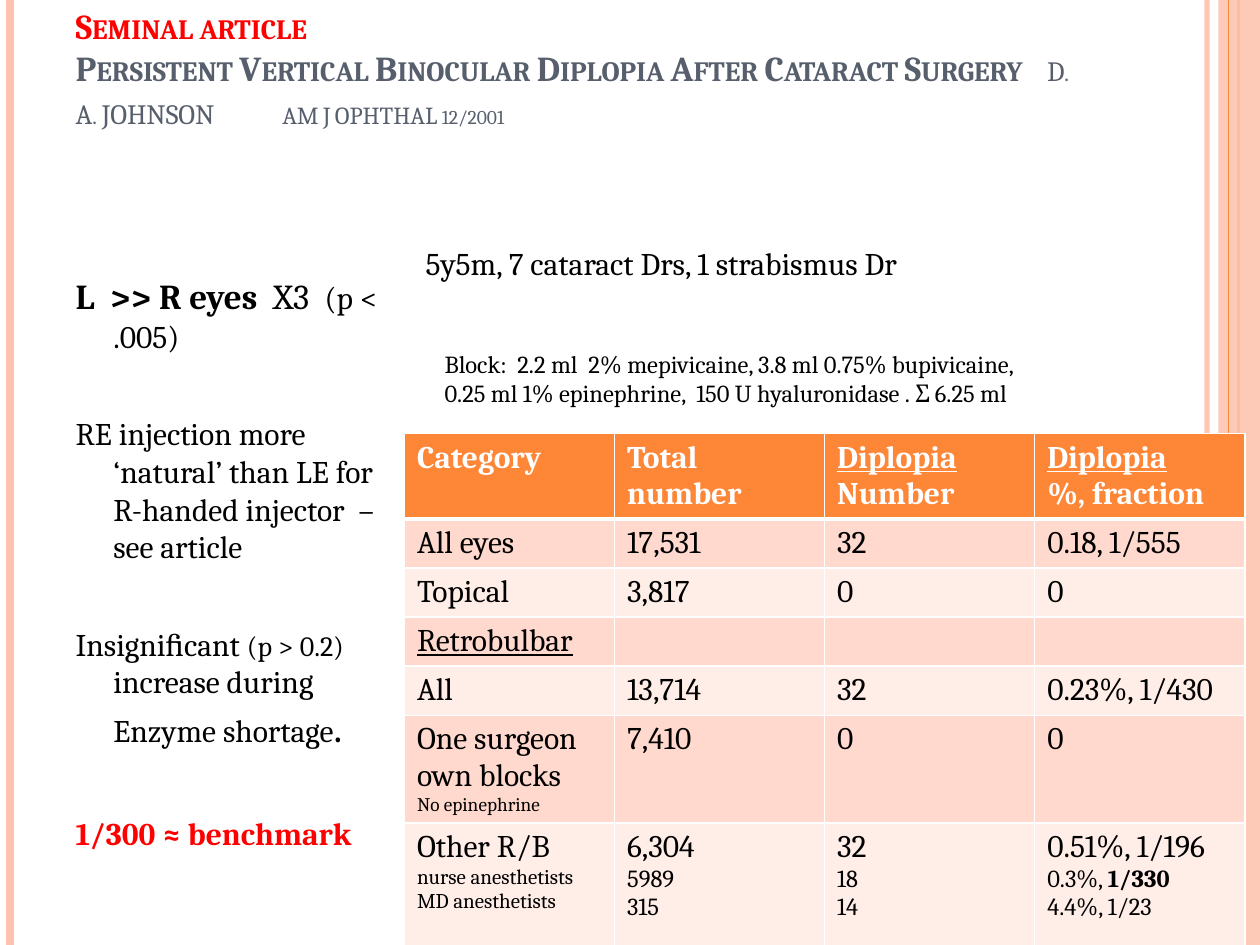
from lxml.etree import SubElement
from pptx import Presentation
from pptx.dml.color import RGBColor
from pptx.enum.shapes import MSO_CONNECTOR, MSO_SHAPE
from pptx.enum.text import MSO_ANCHOR, MSO_AUTO_SIZE, PP_ALIGN
from pptx.oxml.ns import qn
from pptx.util import Emu, Inches, Pt

FONT = "Cambria"
BLACK = RGBColor(0, 0, 0)
WHITE = RGBColor(255, 255, 255)
RED = RGBColor(255, 0, 0)
SLATE = RGBColor(0x57, 0x5F, 0x6D)
ORANGE = RGBColor(0xFE, 0x86, 0x37)
PEACH = RGBColor(0xFE, 0xC3, 0xAE)
BANDS = [RGBColor(0xFF, 0xED, 0xE8), RGBColor(0xFF, 0xD9, 0xCE)]

# A run is (text, size, flags, colour); flags: b bold, u underlined, s small caps.
TITLE = [
    [("Seminal article", 20, "bs", RED)],
    [("Persistent Vertical Binocular Diplopia After Cataract Surgery", 20, "bs", SLATE),
     ("\t", 20, "bs", SLATE),
     ("D. A. JOHNSON", 16, "s", SLATE),
     ("\t", 20, "bs", SLATE),
     ("AM J OPHTHAL 12/2001", 14, "s", SLATE)],
]
TABS = [1.64, 7.71]

# Space before in points, then the runs
FINDINGS = [
    (6, [("L  >> R eyes  ", 20, "b", BLACK), ("X3  ", 20, "", BLACK),
         ("(p < .005)", 18, "", BLACK)]),
    (34, [("RE injection more ‘natural’ than LE for R-handed injector  – see article",
           18, "", BLACK)]),
    (34, [("Insigniﬁcant ", 18, "", BLACK), ("(p > 0.2) ", 16, "", BLACK),
          ("increase during Enzyme shortage", 18, "", BLACK), (".", 24, "", BLACK)]),
    (36, [("1/300 ≈ benchmark", 18, "b", RED)]),
]

# left, top, width, height, wrap, size, lines
NOTES = [
    (3.28, 1.89, 4.67, 0.71, False, 18, ["5y5m, 7 cataract Drs, 1 strabismus Dr"]),
    (3.43, 2.72, 6.12, 0.88, True, 14,
     ["Block:  2.2 ml  2% mepivicaine, 3.8 ml 0.75% bupivicaine,",
      "0.25 ml 1% epinephrine,  150 U hyaluronidase . Σ 6.25 ml"]),
]

# A cell is a list of lines; a line is plain text or a list of (text, size, flags)
HEAD = [["Category"], ["Total number"],
        [[("Diplopia", 18, "u")], "Number"],
        [[("Diplopia", 18, "u")], "%, fraction"]]
ROWS = [
    [["All eyes"], ["17,531"], ["32"], ["0.18, 1/555"]],
    [["Topical"], ["3,817"], ["0"], ["0"]],
    [[[("Retrobulbar", 18, "u")]], [""], [""], [""]],
    [["All"], ["13,714"], ["32"], ["0.23%, 1/430"]],
    [["One surgeon", "own blocks", [("No epinephrine", 11, "")]],
     ["7,410"], ["0"], ["0"]],
    [["Other R/B", [("nurse anesthetists", 12, "")], [("MD anesthetists", 12, "")]],
     ["6,304", [("5989", 14, "")], [("315", 14, "")]],
     ["32", [("18", 14, "")], [("14", 14, "")]],
     ["0.51%, 1/196", [("0.3%, ", 14, ""), ("1/330", 14, "b")],
      [("4.4%, 1/23", 14, "")]]],
]
HEIGHTS = [0.67] + [0.39] * 4 + [0.85, 1.2]

# x, width in points, colour, opacity
RULES = [(9.58, 3, PEACH, 93), (0.08, 4.5, PEACH, 100), (9.83, 1.5, ORANGE, 100)]
EDGE = (9.75, 0.75, ORANGE, 100)


def box(*sides):
    return [Inches(side) for side in sides]


def fade(fill, share):
    color = fill._xPr.find(qn("a:solidFill"))[0]
    SubElement(color, qn("a:alpha"), val=str(share * 1000))


def add_rule(slide, x, width, color, share):
    rule = slide.shapes.add_connector(MSO_CONNECTOR.STRAIGHT, *box(x, 0, x, 7.5))
    rule.line.width = Pt(width)
    rule.line.color.rgb = color
    if share < 100:
        fade(rule.line.fill, share)
    SubElement(rule._element.spPr, qn("a:effectLst"))


def add_runs(para, runs):
    for text, size, flags, color in runs:
        run = para.add_run()
        run.text = text
        font = run.font
        font.name, font.size, font.color.rgb = FONT, Pt(size), color
        font.bold = "b" in flags
        font.underline = "u" in flags
        if "s" in flags:
            font._element.set("cap", "small")


def add_paras(frame, paras):
    """Write each list of runs as one paragraph and return the paragraphs."""
    for i, runs in enumerate(paras):
        para = frame.paragraphs[0] if i == 0 else frame.add_paragraph()
        add_runs(para, runs)
    return frame.paragraphs


def place(holder, *sides):
    holder.left, holder.top, holder.width, holder.height = box(*sides)
    holder.text_frame.auto_size = MSO_AUTO_SIZE.NONE
    return holder.text_frame


def fill_cell(cell, lines, back, color, extra=""):
    cell.fill.solid()
    cell.fill.fore_color.rgb = back
    paras = []
    for line in lines:
        parts = [(line, 18, "")] if isinstance(line, str) else line
        paras.append([(text, size, flags + extra, color) for text, size, flags in parts])
    add_paras(cell.text_frame, paras)


def underline_cell(cell, width):
    """Draw a white bottom border; it has to stand before the cell's fill."""
    props = cell._tc.get_or_add_tcPr()
    edge = SubElement(props, qn("a:lnB"), w=str(Pt(width)))
    SubElement(SubElement(edge, qn("a:solidFill")), qn("a:srgbClr"), val=str(WHITE))
    props.insert(0, edge)


def main():
    deck = Presentation()
    deck.slide_width, deck.slide_height = box(10, 7.5)
    slide = deck.slides.add_slide(deck.slide_layouts[1])

    for rule in RULES:
        add_rule(slide, *rule)
    band = slide.shapes.add_shape(MSO_SHAPE.RECTANGLE, *box(9.67, 0, 0.33, 7.5))
    band.shadow.inherit = False
    band.fill.solid()
    band.fill.fore_color.rgb = PEACH
    fade(band.fill, 87)
    band.line.fill.background()
    add_rule(slide, *EDGE)

    frame = place(slide.shapes.title, 0.5, -0.16, 8.17, 1.25)
    frame.vertical_anchor = MSO_ANCHOR.BOTTOM
    for para in add_paras(frame, TITLE):
        para.alignment = PP_ALIGN.LEFT
        stops = SubElement(para._p.get_or_add_pPr(), qn("a:tabLst"))
        for stop in TABS:
            SubElement(stops, qn("a:tab"), pos=str(Inches(stop)), algn="l")

    frame = place(slide.placeholders[1], 0.5, 2.13, 2.78, 5.33)
    paras = add_paras(frame, [runs for _, runs in FINDINGS])
    for para, (space, _) in zip(paras, FINDINGS):
        para.space_before = Pt(space)
        props = para._p.get_or_add_pPr()
        props.set("marL", str(Inches(0.3)))
        props.set("indent", str(-Inches(0.3)))
        SubElement(props, qn("a:buNone"))

    grid = [HEAD] + ROWS
    table = slide.shapes.add_table(
        len(grid), len(HEAD), *box(3.21, 3.44, 6.67, sum(HEIGHTS))).table
    for col in table.columns:
        col.width = Emu(Inches(6.67) // len(HEAD))
    for r, (row, height) in enumerate(zip(grid, HEIGHTS)):
        table.rows[r].height = Inches(height)
        for c, lines in enumerate(row):
            cell = table.cell(r, c)
            if r == 0:
                fill_cell(cell, lines, ORANGE, WHITE, "b")
                underline_cell(cell, 3)
            else:
                fill_cell(cell, lines, BANDS[r % 2], BLACK)

    for *sides, wrap, size, lines in NOTES:
        frame = slide.shapes.add_textbox(*box(*sides)).text_frame
        frame.word_wrap = wrap
        add_paras(frame, [[(line, size, "", BLACK)] for line in lines])

    deck.save("out.pptx")


if __name__ == "__main__":
    main()
